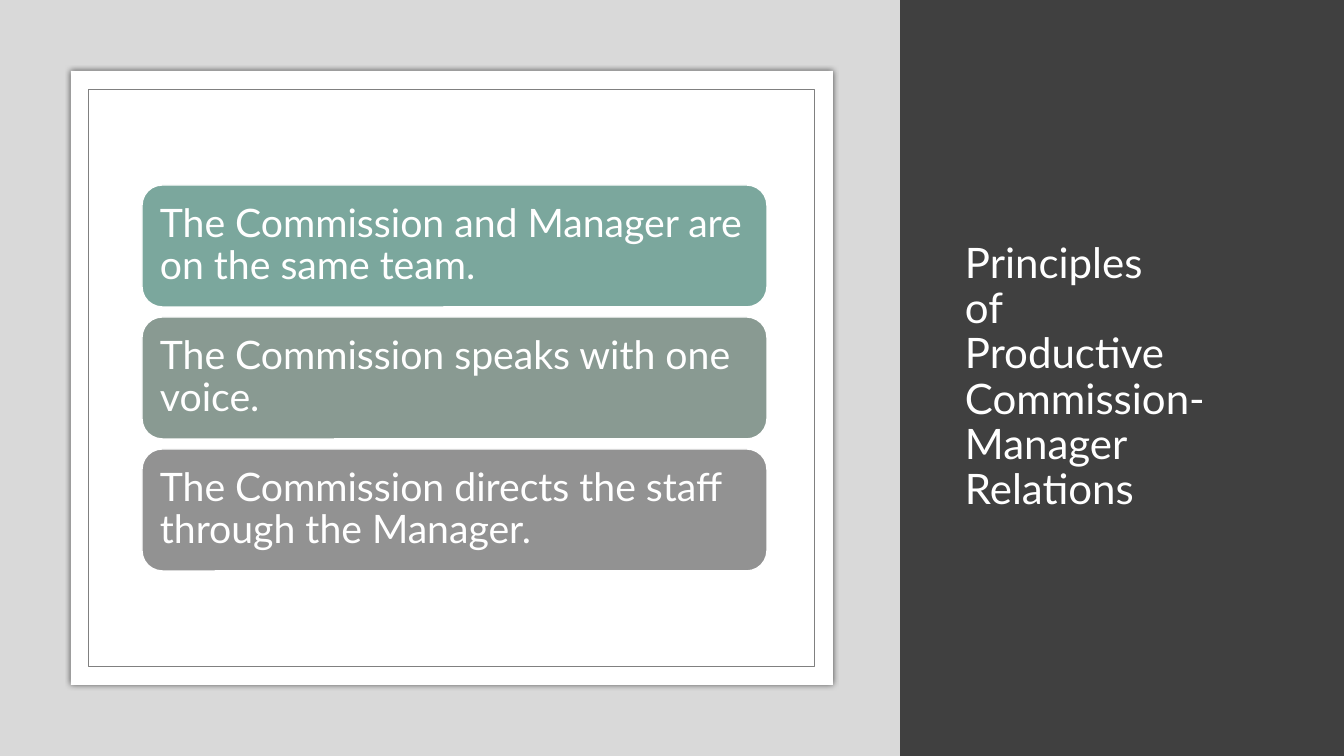
import pptx
import pptx.util
import pptx.dml.color
import pptx.enum.shapes
import pptx.enum.text
import pptx.oxml

SCALE = 914400 / 100.8  # EMU in one px
KIND = pptx.enum.shapes.MSO_SHAPE
FONT = "Lato"
WHITE = "FFFFFF"

CARDS = [
    ("The Commission and Manager are on the same team.", "7BA79D"),
    ("The Commission speaks with one voice.", "899A92"),
    ("The Commission directs the staff through the Manager.", "929292"),
]
TITLE = ["Principles ", "of ", "Productive Commission-Manager Relations"]

GLOW = (
    '<a:effectLst xmlns:a="http://schemas.openxmlformats.org/drawingml/2006/main">'
    '<a:outerShdw blurRad="50800" dist="0" dir="0" algn="ctr" rotWithShape="0">'
    '<a:srgbClr val="000000"><a:alpha val="66000"/></a:srgbClr>'
    '</a:outerShdw></a:effectLst>'
)


def px(n):
    return pptx.util.Emu(round(n * SCALE))


def color(code):
    return pptx.dml.color.RGBColor.from_string(code)


def box(slide, x, y, w, h, fill, line=None, width=1, kind=KIND.RECTANGLE):
    """Draw a flat filled shape, outlined if a line colour is given."""
    shape = slide.shapes.add_shape(kind, px(x), px(y), px(w), px(h))
    shape.shadow.inherit = False
    shape.fill.solid()
    shape.fill.fore_color.rgb = color(fill)
    if line:
        shape.line.color.rgb = color(line)
        shape.line.width = pptx.util.Pt(width)
    else:
        shape.line.fill.background()
    return shape


def glow(shape):
    """Swap the empty effect list for a soft shadow all round."""
    props = shape.fill._xPr
    props.remove(props.find(pptx.oxml.ns.qn("a:effectLst")))
    props.append(pptx.oxml.parse_xml(GLOW))


def write(shape, parts, size, inset):
    """Fill a shape with left-set white text, one line break between parts."""
    frame = shape.text_frame
    frame.word_wrap = True
    frame.auto_size = pptx.enum.text.MSO_AUTO_SIZE.NONE
    frame.vertical_anchor = pptx.enum.text.MSO_ANCHOR.MIDDLE
    frame.margin_left = frame.margin_right = px(inset)
    frame.margin_top = frame.margin_bottom = px(inset)
    para = frame.paragraphs[0]
    para.alignment = pptx.enum.text.PP_ALIGN.LEFT
    para.line_spacing = 0.9
    for i, part in enumerate(parts):
        if i:
            para.add_line_break()
        run = para.add_run()
        run.text = part
        run.font.name = FONT
        run.font.size = pptx.util.Pt(size)
        run.font.color.rgb = color(WHITE)


def head(slide):
    """Place the title on the dark panel, in front of it."""
    title = slide.shapes.title
    title.left, title.top = px(955), px(71)
    title.width, title.height = px(318), px(614)
    write(title, TITLE, 30, 10)
    slide.shapes._spTree.append(title._element)


def cards(slide):
    """Stack the principles at an equal pitch."""
    for i, (text, fill) in enumerate(CARDS):
        card = box(slide, 142, 185 + 132 * i, 625, 122, fill, WHITE,
                   kind=KIND.ROUNDED_RECTANGLE)
        write(card, [text], 28, 12)


def main():
    deck = pptx.Presentation()
    deck.slide_width, deck.slide_height = px(1344), px(756)
    slide = deck.slides.add_slide(deck.slide_layouts[5])

    # Dark panel and title
    box(slide, 0, 0, 1344, 756, "404040")
    head(slide)

    # Grey panel with the framed sheet
    box(slide, 0, 0, 900, 756, "D9D9D9")
    glow(box(slide, 71, 71, 762, 614, WHITE))
    box(slide, 88, 89, 726, 577, WHITE, "808080", 0.5)

    # Principles
    cards(slide)

    deck.save("out.pptx")


if __name__ == "__main__":
    main()
